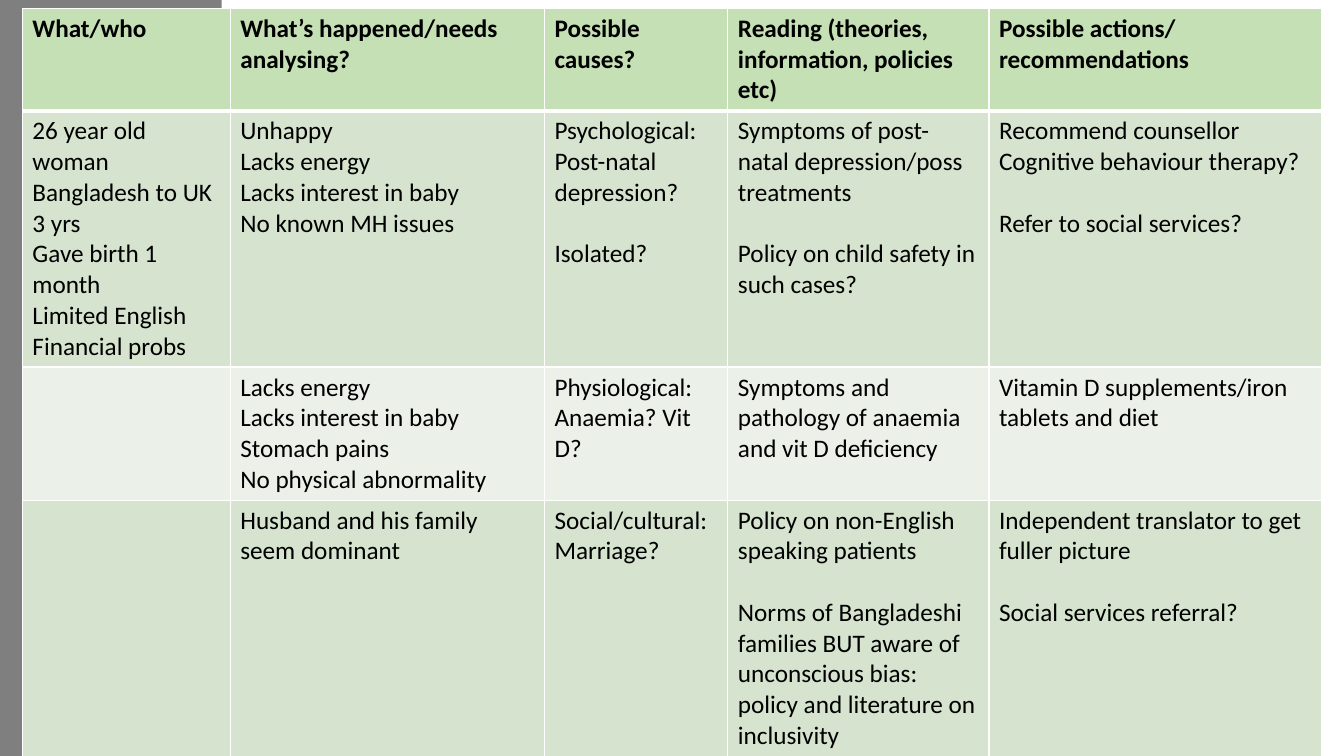
"""Build a slide with a case analysis table beside a grey side band."""
from typing import NamedTuple

from lxml import etree
from pptx import Presentation
from pptx.dml.color import RGBColor
from pptx.enum.shapes import MSO_SHAPE
from pptx.oxml.ns import qn
from pptx.util import Pt

RECTANGLE = MSO_SHAPE.RECTANGLE
BLACK = RGBColor(0x00, 0x00, 0x00)
WHITE = RGBColor(0xFF, 0xFF, 0xFF)
GREY = RGBColor(0x7F, 0x7F, 0x7F)
HEADER_GREEN = RGBColor(0xC5, 0xE0, 0xB4)
MID_GREEN = RGBColor(0xD5, 0xE3, 0xCF)
PALE_GREEN = RGBColor(0xEB, 0xF1, 0xE9)

FONT = "Calibri"
TEXT_SIZE = Pt(18)
LINE_GAP = Pt(22)
COLUMN_WIDTHS = (148.5, 224.5, 131, 186.5, 237.5)


class Row(NamedTuple):
    """One table row; each cell holds groups of paragraphs set apart by a gap."""
    height: float
    fill: RGBColor
    cells: tuple[list[list[str]], ...]
    header: bool = False


ROWS = (
    Row(72, HEADER_GREEN, (
        [["What/who"]],
        [["What’s happened/needs analysing?"]],
        [["Possible causes?"]],
        [["Reading (theories, information, policies etc)"]],
        [["Possible actions/", "recommendations"]],
    ), header=True),
    Row(182, MID_GREEN, (
        [["26 year old woman", "Bangladesh to UK 3 yrs", "Gave birth 1 month",
          "Limited English", "Financial probs"]],
        [["Unhappy", "Lacks energy", "Lacks interest in baby", "No known MH issues"]],
        [["Psychological:", "Post-natal depression?"], ["Isolated?"]],
        [["Symptoms of post-natal depression/poss treatments"],
         ["Policy on child safety in such cases?"]],
        [["Recommend counsellor", "Cognitive behaviour therapy?"],
         ["Refer to social services?"]],
    )),
    Row(93.5, PALE_GREEN, (
        [],
        [["Lacks energy", "Lacks interest in baby", "Stomach pains",
          "No physical abnormality"]],
        [["Physiological:", "Anaemia? Vit D?"]],
        [["Symptoms and pathology of anaemia and vit D deficiency"]],
        [["Vitamin D supplements/iron tablets and diet"]],
    )),
    Row(182, MID_GREEN, (
        [],
        [["Husband and his family seem dominant"]],
        [["Social/cultural:", "Marriage?"]],
        [["Policy on non-English speaking patients"],
         ["Norms of Bangladeshi families BUT aware of unconscious bias: "
          "policy and literature on inclusivity"]],
        [["Independent translator to get fuller picture"],
         ["Social services referral?"]],
    )),
)


def add_borders(cell, top: float, bottom: float) -> None:
    """Give a cell white borders of the given top and bottom widths."""
    tc_pr = cell._tc.get_or_add_tcPr()
    widths = {"a:lnL": 1, "a:lnR": 1, "a:lnT": top, "a:lnB": bottom}
    for i, (tag, width) in enumerate(widths.items()):
        ln = etree.Element(qn(tag), w=str(Pt(width)))
        fill = etree.SubElement(ln, qn("a:solidFill"))
        etree.SubElement(fill, qn("a:srgbClr"), val=str(WHITE))
        tc_pr.insert(i, ln)


def write_groups(tf, groups: list[list[str]], bold: bool) -> None:
    """Write paragraph groups, with one line of space between groups."""
    p = tf.paragraphs[0]
    p.font.size = TEXT_SIZE
    for g, group in enumerate(groups):
        for i, text in enumerate(group):
            if g or i:
                p = tf.add_paragraph()
            if g and not i:
                p.space_before = LINE_GAP
            r = p.add_run()
            r.text = text
            r.font.name = FONT
            r.font.size = TEXT_SIZE
            r.font.bold = bold
            r.font.color.rgb = BLACK


def add_side_band(s) -> None:
    """Draw the grey band at the left edge."""
    sp = s.shapes.add_shape(RECTANGLE, Pt(0), Pt(0), Pt(158.4), Pt(540))
    sp.shadow.inherit = False
    sp.fill.solid()
    sp.fill.fore_color.rgb = GREY
    sp.line.fill.background()


def add_case_table(s) -> None:
    """Draw the table from its rows."""
    frame = s.shapes.add_table(
        len(ROWS), len(COLUMN_WIDTHS), Pt(16), Pt(6),
        Pt(sum(COLUMN_WIDTHS)), Pt(sum(row.height for row in ROWS)))
    table = frame.table
    table.horz_banding = False
    for column, width in zip(table.columns, COLUMN_WIDTHS):
        column.width = Pt(width)
    for i, row in enumerate(ROWS):
        table.rows[i].height = Pt(row.height)
        top = 3 if i and ROWS[i - 1].header else 1
        for j, groups in enumerate(row.cells):
            cell = table.cell(i, j)
            cell.fill.solid()
            cell.fill.fore_color.rgb = row.fill
            add_borders(cell, top, 3 if row.header else 1)
            write_groups(cell.text_frame, groups, row.header)


def main() -> None:
    """Build and save the presentation."""
    prs = Presentation()
    prs.slide_width, prs.slide_height = Pt(960), Pt(540)
    s = prs.slides.add_slide(prs.slide_layouts[6])
    s.background.fill.solid()
    s.background.fill.fore_color.rgb = WHITE
    add_side_band(s)
    add_case_table(s)
    prs.save("out.pptx")


if __name__ == "__main__":
    main()
